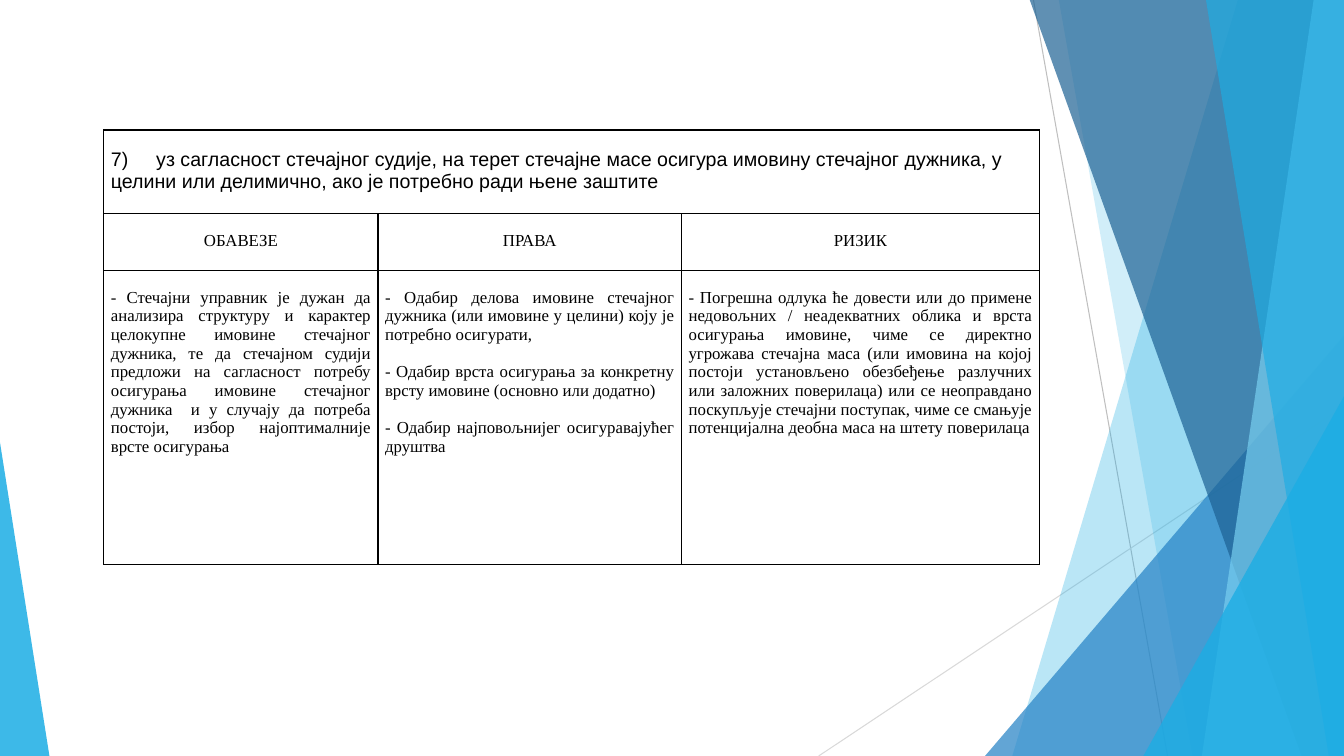
import pptx
import pptx.dml.color
import pptx.enum.shapes
import pptx.enum.text
import pptx.oxml
import pptx.oxml.ns
import pptx.util
from pptx.util import Inches

WIDTH, HEIGHT, TOP = 13.33, 7.5, -0.01
LEFT = pptx.enum.text.PP_ALIGN.LEFT
CENTER = pptx.enum.text.PP_ALIGN.CENTER
JUSTIFY = pptx.enum.text.PP_ALIGN.JUSTIFY
NAMESPACE = pptx.oxml.ns.nsdecls("a")


def colour(value):
    return pptx.dml.color.RGBColor.from_string(value)


def element(markup):
    tag, rest = markup[1:].split(">", 1)
    return pptx.oxml.parse_xml(f"<{tag} {NAMESPACE}>{rest}")


deck = pptx.Presentation()
deck.slide_width = Inches(WIDTH)
deck.slide_height = Inches(HEIGHT)
page = deck.slides.add_slide(deck.slide_layouts[6])

thin_lines = [
    (10.25, 0, 11.58, HEIGHT, "BFBFBF"),
    (WIDTH, 4.03, 8.12, HEIGHT, "D9D9D9"),
]
for start_x, start_y, end_x, end_y, shade in thin_lines:
    line = page.shapes.add_connector(
        pptx.enum.shapes.MSO_CONNECTOR.STRAIGHT,
        Inches(start_x), Inches(start_y), Inches(end_x), Inches(end_y),
    )
    line.line.color.rgb = colour(shade)
    line.line.width = pptx.util.Pt(0.75)
    line._element.spPr.append(element("<a:effectLst></a:effectLst>"))

facets = [
    ("band", (12.28, 10.04), "1CADE4", 30),
    ("band", (10.5, 11.83), "1CADE4", 20),
    ("triangle", (9.77, 3.33, 3.56, 1), "2683C6", 72),
    ("band", (10.21, 12.91), "1D6294", 70),
    ("band", (13.03, 11.92), "77CEEF", 70),
    ("band", (11.96, 13.18), "1CADE4", 65),
    ("triangle", (11.34, 3.93, 1.99, 1), "1CADE4", 80),
    ("triangle", (0, 4.39, 0.49, 0), "1CADE4", 85),
]
for kind, geometry, shade, opacity in facets:
    if kind == "band":
        top_left, bottom_left = geometry
        outline = page.shapes.build_freeform(Inches(top_left), Inches(TOP))
        corners = [(WIDTH, TOP), (WIDTH, HEIGHT), (bottom_left, HEIGHT)]
        outline.add_line_segments([(Inches(x), Inches(y)) for x, y in corners], close=True)
        facet = outline.convert_to_shape()
    else:
        left, top, width, apex = geometry
        facet = page.shapes.add_shape(
            pptx.enum.shapes.MSO_SHAPE.ISOSCELES_TRIANGLE,
            Inches(left), Inches(top), Inches(width), Inches(HEIGHT - top),
        )
        facet.adjustments[0] = apex
    facet.shadow.inherit = False
    facet.line.fill.background()
    facet.fill.solid()
    facet.fill.fore_color.rgb = colour(shade)
    fill_colour = facet._element.spPr.find(".//" + pptx.oxml.ns.qn("a:srgbClr"))
    alpha = element("<a:alpha></a:alpha>")
    alpha.set("val", str(opacity * 1000))
    fill_colour.append(alpha)

column_widths = [2.72, 3.01, 3.55]
row_heights = [0.83, 0.56, 2.92]
title = (
    "7)\tуз сагласност стечајног судије, на терет стечајне масе осигура имовину "
    "стечајног дужника, у целини или делимично, ако је потребно ради њене заштите"
)
duties = (
    "- Стечајни управник је дужан да анализира структуру и карактер целокупне имовине "
    "стечајног дужника, те да стечајном судији предложи на сагласност потребу осигурања "
    "имовине стечајног дужника  и у случају да потреба постоји, избор најоптималније "
    "врсте осигурања"
)
rights = [
    "- Одабир делова имовине стечајног дужника (или имовине у целини) коју је потребно осигурати,",
    "- Одабир врста осигурања за конкретну врсту имовине (основно или додатно)",
    "- Одабир најповољнијег осигуравајућег друштва",
]
risk = (
    "- Погрешна одлука ће довести или до примене недовољних / неадекватних облика и врста "
    "осигурања имовине, чиме се директно угрожава стечајна маса (или имовина на којој "
    "постоји установљено обезбеђење разлучних или заложних поверилаца) или се неоправдано "
    "поскупљује стечајни поступак, чиме се смањује потенцијална деобна маса на штету поверилаца"
)
rows = [
    ([[title], [], []], LEFT, "Arial", 14),
    ([["ОБАВЕЗЕ"], ["ПРАВА"], ["РИЗИК"]], CENTER, "Times New Roman", 12),
    ([[duties], rights, [risk]], JUSTIFY, "Times New Roman", 12),
]

table = page.shapes.add_table(
    len(rows), len(column_widths), Inches(1.03), Inches(1.29),
    Inches(sum(column_widths)), Inches(sum(row_heights)),
).table
table.first_row = False
table.horz_banding = False
for column, width in zip(table.columns, column_widths):
    column.width = Inches(width)
for row, height in zip(table.rows, row_heights):
    row.height = Inches(height)
table.cell(0, 0).merge(table.cell(0, 2))

cell_format = {
    "margin_left": Inches(0.07),
    "margin_right": Inches(0.07),
    "margin_top": Inches(0.18),
    "margin_bottom": 0,
    "vertical_anchor": pptx.enum.text.MSO_ANCHOR.TOP,
}
for row_index, (contents, alignment, font_name, size) in enumerate(rows):
    for column_index, texts in enumerate(contents):
        cell = table.cell(row_index, column_index)
        for name, value in cell_format.items():
            setattr(cell, name, value)
        cell.fill.background()
        properties = cell._tc.get_or_add_tcPr()
        for position, side in enumerate(["lnL", "lnR", "lnT", "lnB"]):
            border = element(
                f'<a:{side}><a:solidFill><a:srgbClr val="000000"/></a:solidFill></a:{side}>'
            )
            border.set("w", str(pptx.util.Pt(1)))
            properties.insert(position, border)
        for text_index, text in enumerate(texts):
            frame = cell.text_frame
            para = frame.add_paragraph() if text_index else frame.paragraphs[0]
            para.alignment = alignment
            if text_index:
                para.space_before = pptx.util.Pt(13.3)
            span = para.add_run()
            span.text = text
            font_format = {"name": font_name, "size": pptx.util.Pt(size)}
            for name, value in font_format.items():
                setattr(span.font, name, value)
            span.font.color.rgb = colour("000000")

tab_list = element("<a:tabLst><a:tab/></a:tabLst>")
tab_list[0].set("pos", str(Inches(0.45)))
tab_list[0].set("algn", "l")
table.cell(0, 0).text_frame.paragraphs[0]._p.get_or_add_pPr().append(tab_list)

deck.save("out.pptx")
